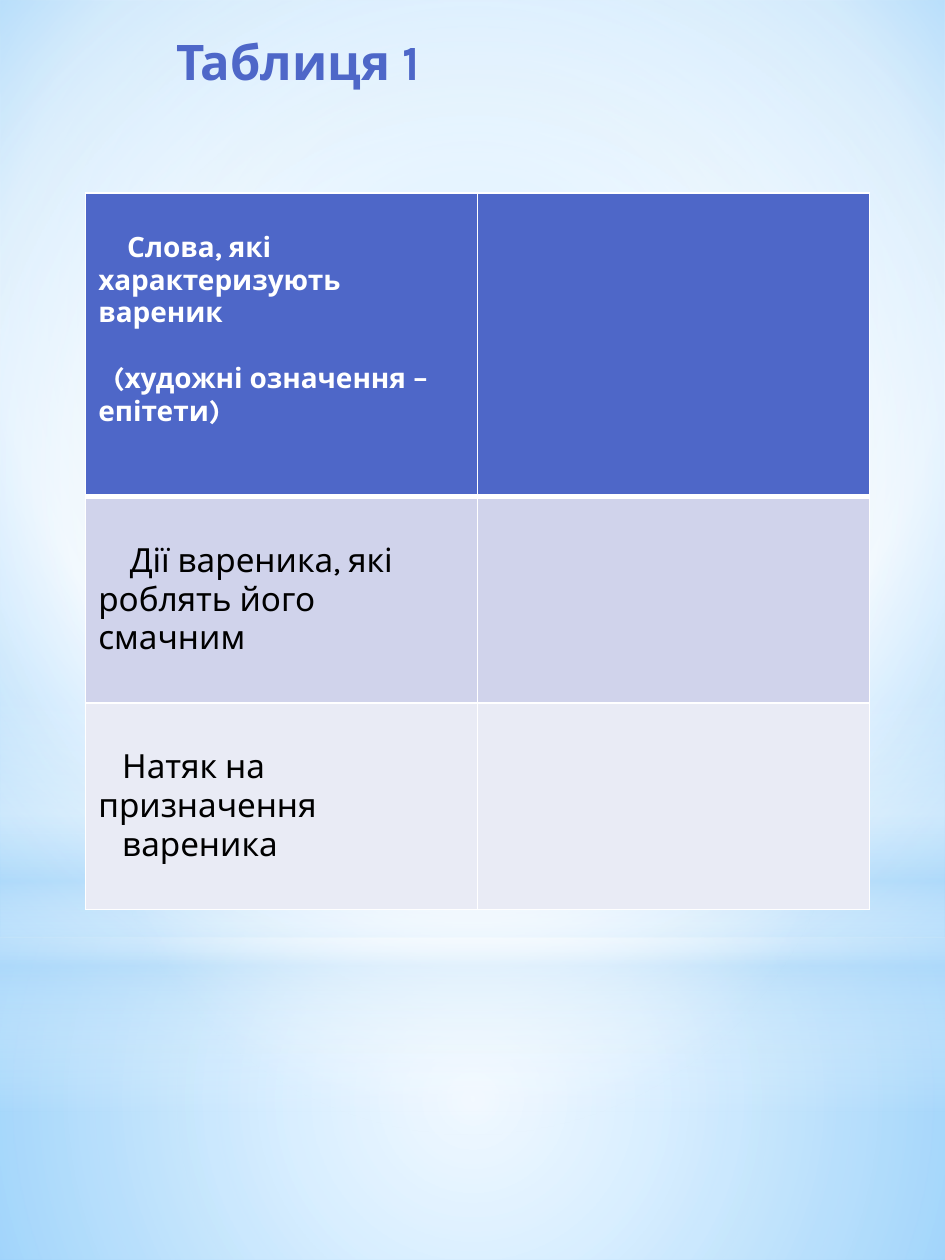
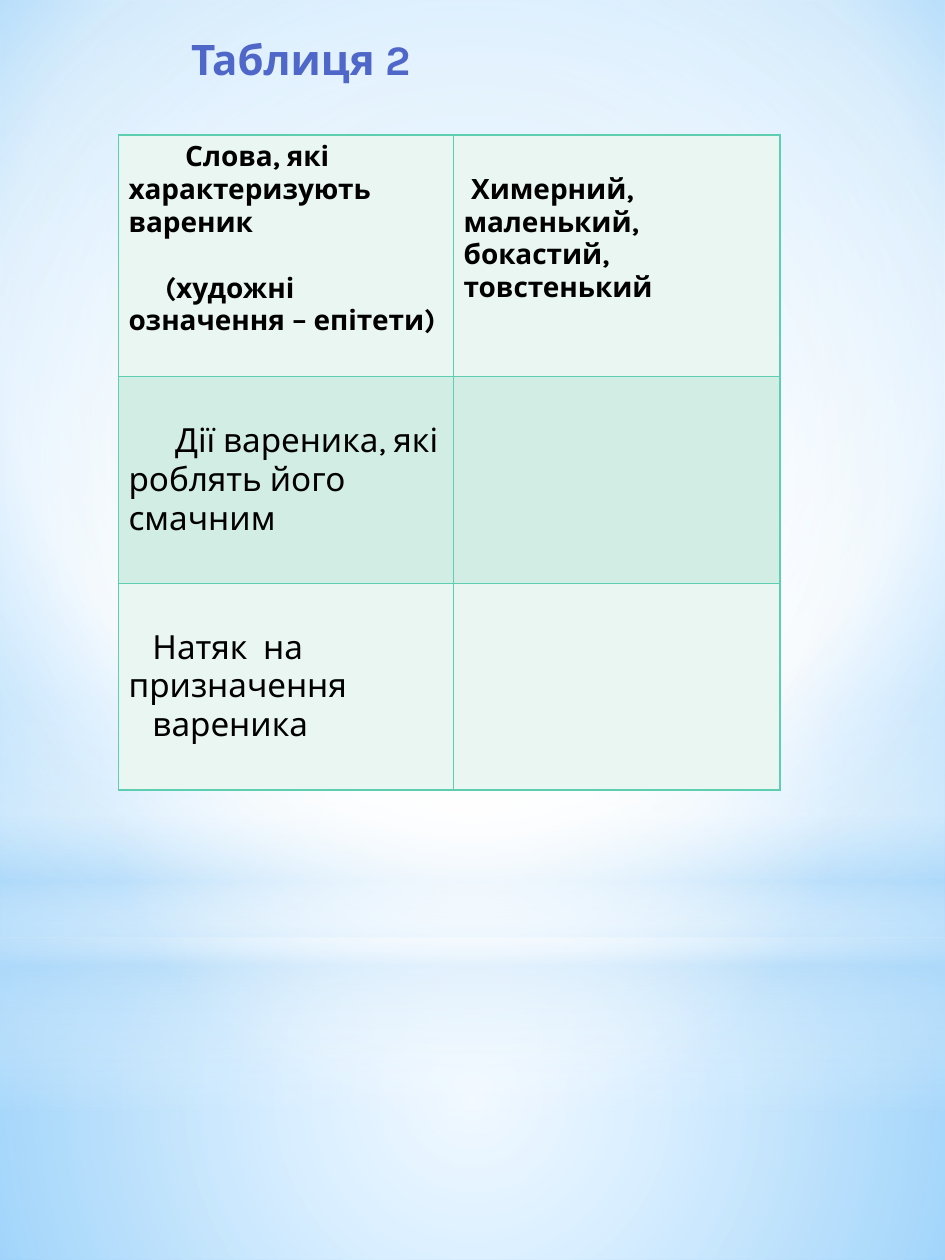
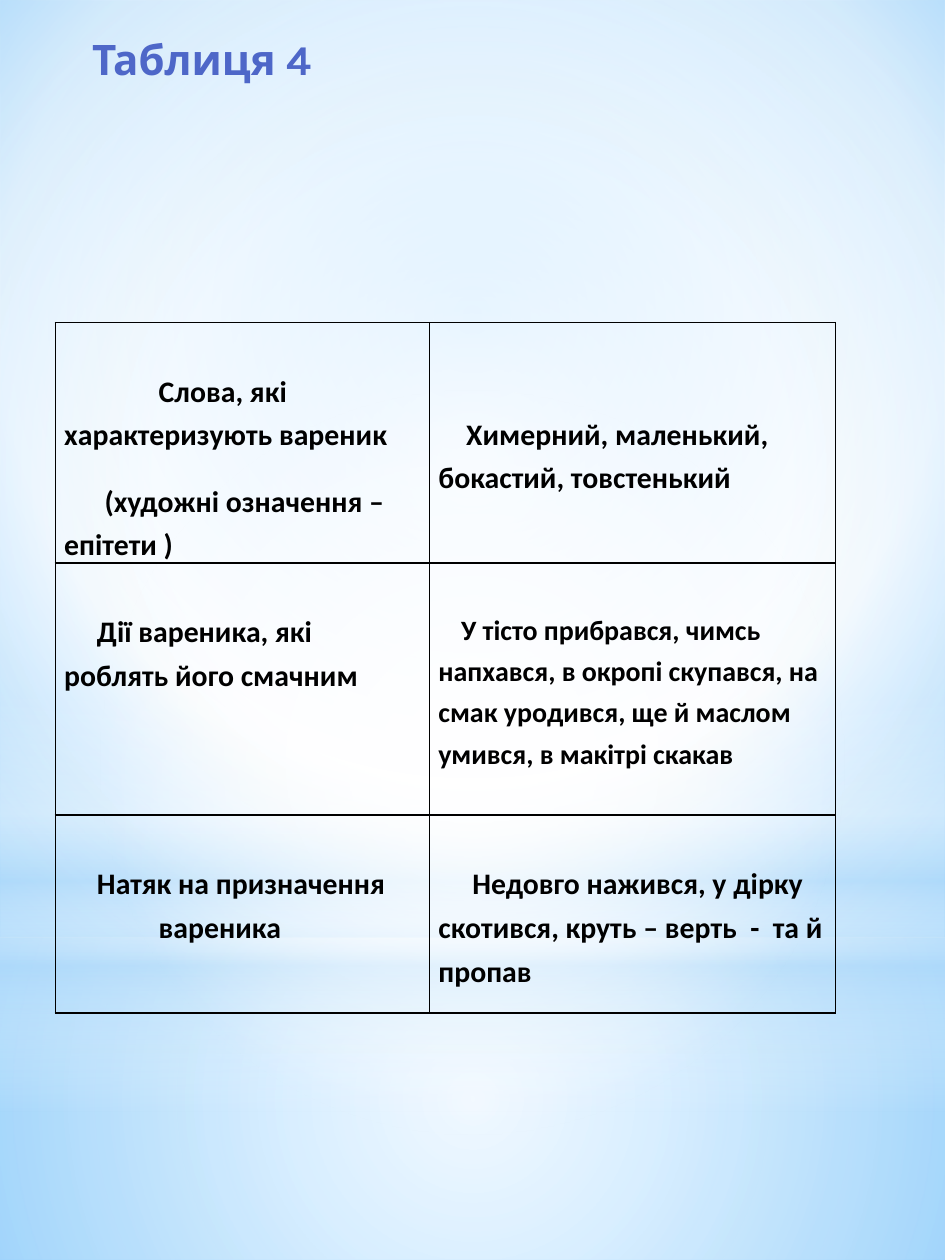
from dataclasses import dataclass
from typing import NamedTuple

from lxml import etree
from pptx import Presentation
from pptx.dml.color import RGBColor
from pptx.enum import shapes, text
from pptx.oxml.ns import qn
from pptx.util import Inches, Pt

BLUE, MINT, WHITE, BLACK, SKY = "4E67C8", "5DCEAF", "FFFFFF", "000000", "B4DCFA"
DISPLAY_FONT, BODY_FONT = "Karla", "Calibri"


class Stop(NamedTuple):
    position: int
    color: str
    opacity: int = 100


class Band(NamedTuple):
    preset: shapes.MSO_SHAPE
    top: float
    height: float
    stops: list[Stop]
    angle: int | None = None


class Para(NamedTuple):
    words: str
    indent: float = 0
    gap: float = 0


class Entry(NamedTuple):
    paragraphs: list[Para]
    top: float
    size: float
    bold: bool = False
    color: str = BLACK


@dataclass
class Sheet:
    title: str
    title_box: tuple[float, float, float]
    title_size: int
    position: tuple[float, float]
    columns: list[float]
    rows: list[float]
    entries: list[list[Entry | None]]
    border: str
    row_fills: list[str | None]
    font: str = DISPLAY_FONT
    side_margin: float = 0.1
    bottom_margin: float = 0.05
    line_spacing: float = 1.0
    header_rule: float = 1


BACKGROUND = [Stop(0, "9ED5FF"), Stop(60, WHITE), Stop(100, "5BB9FF")]
RECT, OVAL = shapes.MSO_SHAPE.RECTANGLE, shapes.MSO_SHAPE.OVAL
BANDS = [
    Band(RECT, 7.44, 2.56, [Stop(0, WHITE, 91), Stop(37, WHITE, 76), Stop(100, SKY, 79)]),
    Band(RECT, 0, 7.44, [Stop(0, WHITE, 89), Stop(48, WHITE, 62), Stop(100, SKY, 79)]),
    Band(RECT, 5.49, 3.33, [Stop(0, WHITE, 0), Stop(29, WHITE, 30), Stop(45, SKY, 40),
                            Stop(55, WHITE, 26), Stop(65, SKY, 60), Stop(100, WHITE, 0)], 90),
    Band(OVAL, 2.33, 7.44, [Stop(0, WHITE), Stop(56, WHITE, 0)]),
]

WORDS = "Слова, які характеризують вареник"
EPITHETS = "(художні означення – епітети)"
ACTIONS = "Дії вареника, які роблять його смачним"
HINT, HINT_END = "Натяк на призначення", "вареника"

SHEETS = [
    Sheet(
        "Таблиця 1", (0.44, 0.2, 2.99), 28, (0.68, 1.53), [3.11, 3.11], [2.41, 1.64, 1.64],
        [
            [Entry([Para(WORDS, 0.23), Para(EPITHETS, 0.12, 19)], 0.31, 16, True, WHITE), None],
            [Entry([Para(ACTIONS, 0.25)], 0.36, 19), None],
            [Entry([Para(HINT, 0.19), Para(HINT_END, 0.19)], 0.36, 19), None],
        ],
        WHITE, [BLUE, "D0D3EB", "E9EBF5"], header_rule=3,
    ),
    Sheet(
        "Таблиця 2", (0.38, 0.22, 2.98), 24, (0.94, 1.07), [2.66, 2.59], [1.92, 1.64, 1.64],
        [
            [Entry([Para(WORDS, 0.45), Para(EPITHETS, 0.29, 19)], 0.05, 16, True),
             Entry([Para("Химерний, маленький,", 0.06), Para("бокастий, товстенький")],
                   0.31, 16, True)],
            [Entry([Para(ACTIONS, 0.37)], 0.36, 19), None],
            [Entry([Para("Натяк  на призначення", 0.19), Para(HINT_END, 0.19)], 0.36, 19), None],
        ],
        MINT, ["EAF6F2", "D2EDE3", "EAF6F2"], side_margin=0.08,
    ),
    Sheet(
        "Таблиця 4", (0.38, 0.22, 2.19), 24, (0.44, 2.56), [2.97, 3.22], [1.91, 2.0, 1.57],
        [
            [Entry([Para(WORDS, 0.75), Para("(художні означення – епітети )", 0.32, 13)],
                   0.35, 17, True),
             Entry([Para("Химерний, маленький, бокастий, товстенький", 0.22)], 0.69, 17, True)],
            [Entry([Para(ACTIONS, 0.26)], 0.35, 17, True),
             Entry([Para("У тісто прибрався, чимсь напхався, в окропі скупався, на смак "
                         "уродився, ще й маслом умився, в макітрі скакав", 0.18)],
                   0.35, 16, True)],
            [Entry([Para(HINT, 0.26), Para(HINT_END, 0.75)], 0.35, 17, True),
             Entry([Para("Недовго нажився, у дірку скотився, круть – верть  -  та й пропав",
                         0.27)], 0.35, 17, True)],
        ],
        BLACK, [None] * 3, BODY_FONT, 0.07, 0, 1.2,
    ),
]


def rgb(color: str) -> RGBColor:
    return RGBColor.from_string(color)


def add_node(parent, tag: str, **attributes):
    node = etree.SubElement(parent, qn(tag))
    for key, value in attributes.items():
        node.set(key, str(value))
    return node


def set_gradient(properties, stops: list[Stop], angle: int | None = None,
                 focus: tuple[int, int, int, int] = (50, 50, 50, 50)) -> None:
    """Swap a solid fill for a gradient: linear with an angle, else circular around focus."""
    gradient = etree.Element(qn("a:gradFill"), rotWithShape="1")
    stop_list = add_node(gradient, "a:gsLst")
    for stop in stops:
        node = add_node(stop_list, "a:gs", pos=stop.position * 1000)
        color = add_node(node, "a:srgbClr", val=stop.color)
        if stop.opacity < 100:
            add_node(color, "a:alpha", val=stop.opacity * 1000)
    if angle is None:
        circle = add_node(gradient, "a:path", path="circle")
        add_node(circle, "a:fillToRect",
                 **{side: share * 1000 for side, share in zip("ltrb", focus)})
    else:
        add_node(gradient, "a:lin", ang=angle * 60000, scaled=0)
    properties.replace(properties.find(qn("a:solidFill")), gradient)


def set_background(master) -> None:
    master.background.fill.solid()
    set_gradient(master.element.find(".//" + qn("p:bgPr")), BACKGROUND, focus=(20, 10, 20, 60))


def draw_band(slide, band: Band) -> None:
    glow = slide.shapes.add_shape(band.preset, 0, Inches(band.top),
                                  Inches(7.5), Inches(band.height))
    glow.shadow.inherit = False
    glow.line.fill.background()
    glow.fill.solid()
    set_gradient(glow.element.spPr, band.stops, band.angle)


def add_run(paragraph, words: str, font: str, size: float, bold: bool, color: str) -> None:
    run = paragraph.add_run()
    run.text = words
    run.font.name = font
    run.font.size = Pt(size)
    run.font.bold = bold
    run.font.color.rgb = rgb(color)


def draw_title(slide, sheet: Sheet) -> None:
    left, top, width = map(Inches, sheet.title_box)
    frame = slide.shapes.add_textbox(left, top, width, Inches(0.68)).text_frame
    frame.word_wrap = True
    heading = frame.paragraphs[0]
    heading.alignment = text.PP_ALIGN.RIGHT
    add_run(heading, sheet.title, DISPLAY_FONT, sheet.title_size, True, BLUE)


def set_borders(cell, color: str, widths: dict[str, float]) -> None:
    properties = cell._tc.get_or_add_tcPr()
    for index, (side, width) in enumerate(widths.items()):
        line = etree.Element(qn(f"a:ln{side}"), w=str(Pt(width)))
        add_node(add_node(line, "a:solidFill"), "a:srgbClr", val=color)
        properties.insert(index, line)


def fill_entry(cell, entry: Entry, sheet: Sheet) -> None:
    cell.margin_top = Inches(entry.top)
    for index, para in enumerate(entry.paragraphs):
        frame = cell.text_frame
        paragraph = frame.add_paragraph() if index else frame.paragraphs[0]
        paragraph.line_spacing = sheet.line_spacing
        paragraph.space_before = Pt(para.gap)
        paragraph._p.get_or_add_pPr().set("indent", str(Inches(para.indent)))
        add_run(paragraph, para.words, sheet.font, entry.size, entry.bold, entry.color)


def draw_table(slide, sheet: Sheet) -> None:
    left, top = map(Inches, sheet.position)
    table = slide.shapes.add_table(
        len(sheet.rows), len(sheet.columns), left, top,
        Inches(sum(sheet.columns)), Inches(sum(sheet.rows))).table
    table.first_row = table.horz_banding = False
    for column, width in zip(table.columns, sheet.columns):
        column.width = Inches(width)
    for row, height in enumerate(sheet.rows):
        table.rows[row].height = Inches(height)
        above = sheet.header_rule if row == 1 else 1
        below = sheet.header_rule if row == 0 else 1
        for cell, entry in zip(table.rows[row].cells, sheet.entries[row]):
            cell.margin_left = cell.margin_right = Inches(sheet.side_margin)
            cell.margin_bottom = Inches(sheet.bottom_margin)
            if sheet.row_fills[row]:
                cell.fill.solid()
                cell.fill.fore_color.rgb = rgb(sheet.row_fills[row])
            else:
                cell.fill.background()
            set_borders(cell, sheet.border, {"L": 1, "R": 1, "T": above, "B": below})
            if entry:
                fill_entry(cell, entry, sheet)


def main() -> None:
    deck = Presentation()
    deck.slide_width, deck.slide_height = Inches(7.5), Inches(10)
    set_background(deck.slide_master)
    for sheet in SHEETS:
        slide = deck.slides.add_slide(deck.slide_layouts[6])
        for band in BANDS:
            draw_band(slide, band)
        draw_title(slide, sheet)
        draw_table(slide, sheet)
    deck.save("out.pptx")


if __name__ == "__main__":
    main()
